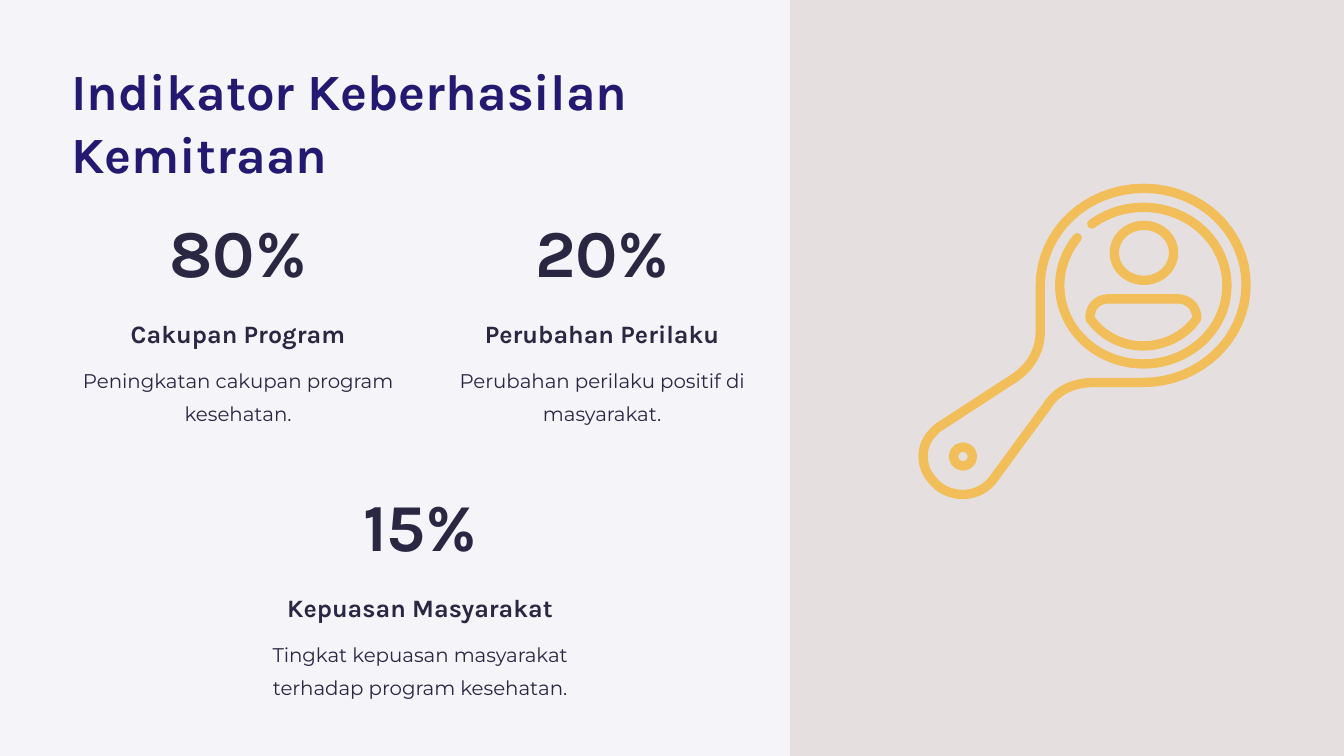
"""Build the slide on partnership success indicators with a magnifier icon."""
from lxml.etree import SubElement
from pptx import Presentation
from pptx.dml.color import RGBColor
from pptx.enum.shapes import MSO_SHAPE
from pptx.enum.text import PP_ALIGN
from pptx.oxml.ns import qn
from pptx.util import Cm, Pt

BACKGROUND = RGBColor(0xF5, 0xF4, 0xF8)
PANEL = RGBColor(0xE5, 0xE0, 0xDF)
TITLE = RGBColor(0x23, 0x19, 0x71)
INK = RGBColor(0x2A, 0x27, 0x42)
GOLD = RGBColor(0xF1, 0xBE, 0x5A)

SLIDE_WIDTH, SLIDE_HEIGHT = 25.4, 14.29
PANEL_LEFT = 14.93
LEFT, RIGHT = 1.35, 8.23
CENTRE = (LEFT + RIGHT) / 2
TOP_ROW, BOTTOM_ROW = 4.24, 9.42
COLUMN_WIDTH = 6.3

INDICATORS = [
    (LEFT, TOP_ROW, "80%", "Cakupan Program", "Peningkatan cakupan program kesehatan."),
    (RIGHT, TOP_ROW, "20%", "Perubahan Perilaku", "Perubahan perilaku positif di masyarakat."),
    (CENTRE, BOTTOM_ROW, "15%", "Kepuasan Masyarakat",
     "Tingkat kepuasan masyarakat terhadap program kesehatan."),
]

ROUND_PARTS = [
    (MSO_SHAPE.OVAL, 21.62, 4.78, 0.56, 0.52),
    (MSO_SHAPE.OVAL, 18.2, 8.63, 0.18, 0.18),
    (MSO_SHAPE.ARC, 21.61, 5.4, 1.58, 1.48),
]
ARC_ANGLES = (230, 216)

MAGNIFIER = [
    [(21.62, 3.56)],
    [(22.68, 3.56), (23.55, 4.37), (23.55, 5.38)],
    [(23.55, 6.4), (22.68, 7.23), (21.6, 7.23)],
    [(20.68, 7.23)],
    [(20.27, 7.23), (19.96, 7.39), (19.77, 7.7)],
    [(18.8, 9.02)],
    [(18.54, 9.42), (17.98, 9.45), (17.67, 9.13)],
    [(17.37, 8.84), (17.37, 8.41), (17.67, 8.14)],
    [(17.7, 8.1), (17.73, 8.08), (17.78, 8.05)],
    [(19.18, 7.14)],
    [(19.48, 6.93), (19.66, 6.63), (19.66, 6.27)],
    [(19.66, 5.41)],
    [(19.66, 4.39), (20.52, 3.56), (21.62, 3.56)],
]
TORSO = [
    [(20.96, 5.65)],
    [(22.25, 5.65)],
    [(22.45, 5.65), (22.62, 5.79), (22.62, 6.02)],
    [(22.4, 6.35), (22.0, 6.54), (21.6, 6.54)],
    [(21.21, 6.54), (20.83, 6.35), (20.6, 6.02)],
    [(20.6, 5.79), (20.75, 5.65), (20.96, 5.65)],
]
CURVE_STEPS = 16


def add_text(slide, text, left, top, width, height, *, size, spacing,
             font="Karla", color=INK, bold=True, align=PP_ALIGN.CENTER, wrap=False):
    box = slide.shapes.add_textbox(Cm(left), Cm(top), Cm(width), Cm(height))
    frame = box.text_frame
    frame.margin_left = frame.margin_right = frame.margin_top = frame.margin_bottom = 0
    frame.word_wrap = wrap
    paragraph = frame.paragraphs[0]
    paragraph.alignment = align
    paragraph.line_spacing = Pt(spacing)
    run = paragraph.add_run()
    run.text = text
    run.font.name = font
    run.font.size = Pt(size)
    run.font.bold = bold
    run.font.color.rgb = color


def style_stroke(shape):
    shape.shadow.inherit = False
    shape.fill.background()
    shape.line.color.rgb = GOLD
    shape.line.width = Pt(5)
    line = shape.element.spPr.find(qn("a:ln"))
    line.set("cap", "rnd")
    SubElement(line, qn("a:round"))


def curve_points(start, controls):
    points = [start, *controls]
    for step in range(1, CURVE_STEPS + 1):
        t = step / CURVE_STEPS
        weights = ((1 - t) ** 3, 3 * t * (1 - t) ** 2, 3 * t ** 2 * (1 - t), t ** 3)
        yield tuple(sum(w * point[axis] for w, point in zip(weights, points))
                    for axis in (0, 1))


def add_outline(slide, segments):
    points = list(segments[0])
    for segment in segments[1:]:
        points.extend(segment if len(segment) == 1 else list(curve_points(points[-1], segment)))
    vertices = [(Cm(x), Cm(y)) for x, y in points]
    builder = slide.shapes.build_freeform(*vertices[0])
    builder.add_line_segments(vertices[1:], close=True)
    style_stroke(builder.convert_to_shape())


def add_round_part(slide, kind, x, y, radius_x, radius_y):
    shape = slide.shapes.add_shape(kind, Cm(x - radius_x), Cm(y - radius_y),
                                   Cm(2 * radius_x), Cm(2 * radius_y))
    if kind == MSO_SHAPE.ARC:
        for index, angle in enumerate(ARC_ANGLES):
            shape.adjustments[index] = angle * 0.6
    style_stroke(shape)


def main():
    presentation = Presentation()
    presentation.slide_width = Cm(SLIDE_WIDTH)
    presentation.slide_height = Cm(SLIDE_HEIGHT)
    slide = presentation.slides.add_slide(presentation.slide_layouts[6])
    slide.background.fill.solid()
    slide.background.fill.fore_color.rgb = BACKGROUND

    panel = slide.shapes.add_shape(MSO_SHAPE.RECTANGLE, Cm(PANEL_LEFT), 0,
                                   Cm(SLIDE_WIDTH - PANEL_LEFT), Cm(SLIDE_HEIGHT))
    panel.shadow.inherit = False
    panel.fill.solid()
    panel.fill.fore_color.rgb = PANEL
    panel.line.fill.background()

    add_text(slide, "Indikator Keberhasilan Kemitraan", LEFT, 1.07, 13.18, 2.41,
             size=27.2, spacing=34.1, color=TITLE, align=PP_ALIGN.LEFT, wrap=True)
    for left, top, value, label, description in INDICATORS:
        add_text(slide, value, left, top, COLUMN_WIDTH, 1.27, size=35.9, spacing=35.9)
        add_text(slide, label, left, top + 1.75, COLUMN_WIDTH, 0.61, size=13.4, spacing=16.9)
        add_text(slide, description, left, top + 2.58, COLUMN_WIDTH, 1.24, size=10.6,
                 spacing=17.2, font="Montserrat", bold=False, wrap=True)

    for part in ROUND_PARTS:
        add_round_part(slide, *part)
    for segments in (TORSO, MAGNIFIER):
        add_outline(slide, segments)
    presentation.save("out.pptx")


if __name__ == "__main__":
    main()
